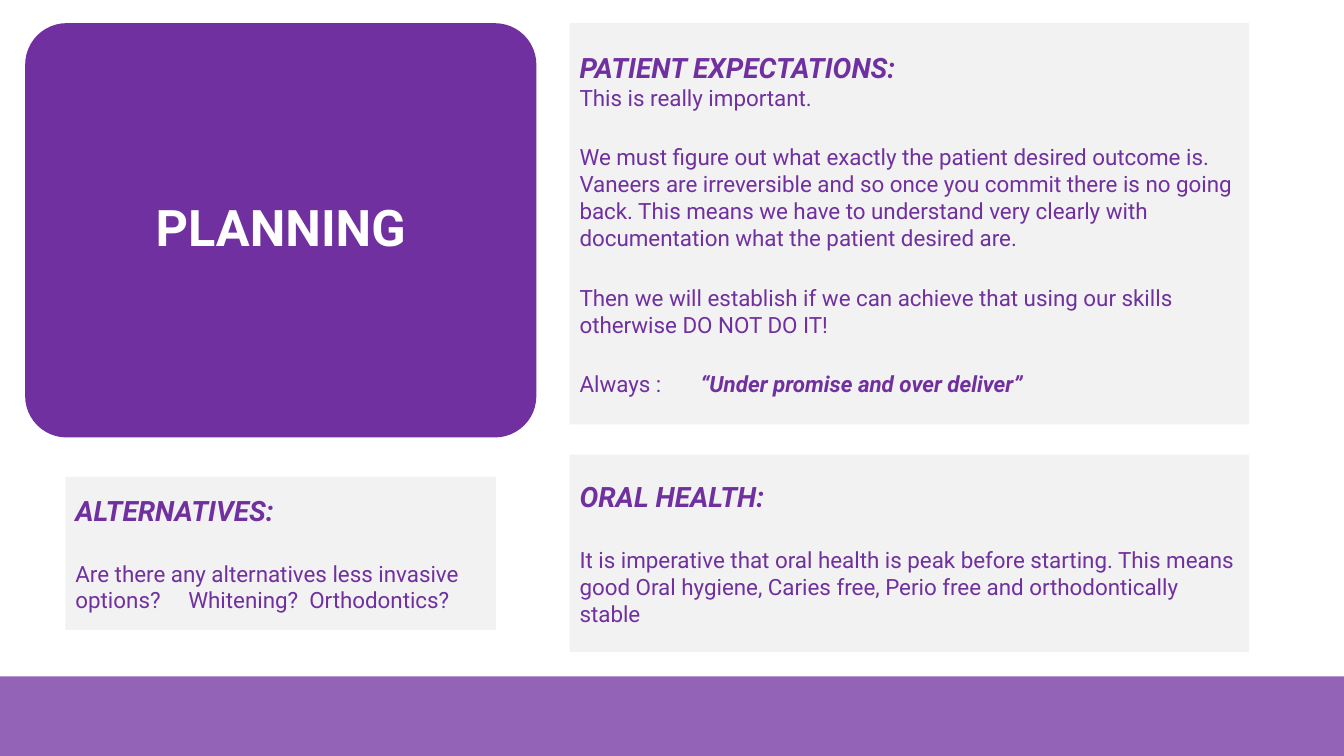
from lxml.etree import SubElement
from pptx import Presentation
from pptx.dml.color import RGBColor
from pptx.enum.shapes import MSO_SHAPE
from pptx.enum.text import MSO_ANCHOR, PP_ALIGN
from pptx.oxml.ns import qn
from pptx.util import Inches, Pt

PURPLE = RGBColor(0x70, 0x30, 0xA0)
PALE_GREY = RGBColor(0xF2, 0xF2, 0xF2)
WHITE = RGBColor(0xFF, 0xFF, 0xFF)

FONT = "Roboto"
HEADING_SIZE = 20
BODY_SIZE = 16
PARAGRAPH_GAP = Pt(23.4)
RIGHT_COLUMN = 5.65
RIGHT_WIDTH = 6.74


def add_block(page, kind, left, top, width, height, color):
    block = page.shapes.add_shape(
        kind, Inches(left), Inches(top), Inches(width), Inches(height))
    block.shadow.inherit = False
    block.fill.solid()
    block.fill.fore_color.rgb = color
    block.line.fill.background()
    frame = block.text_frame
    frame.word_wrap = True
    frame.vertical_anchor = MSO_ANCHOR.MIDDLE
    frame.margin_left = frame.margin_right = Inches(0.1)
    frame.margin_top = frame.margin_bottom = Inches(0.1)
    return block


def set_opacity(shape, percent):
    color = shape.fill._xPr.find(qn("a:solidFill"))[0]
    SubElement(color, qn("a:alpha")).set("val", str(percent * 1000))


def add_span(para, text, size, color=PURPLE, bold=False, italic=False):
    span = para.add_run()
    span.text = text
    span.font.name = FONT
    span.font.size = Pt(size)
    span.font.color.rgb = color
    span.font.bold = bold
    span.font.italic = italic


def add_body(frame, text, gap=PARAGRAPH_GAP):
    para = frame.add_paragraph()
    para.alignment = PP_ALIGN.LEFT
    para.space_before = gap
    add_span(para, text, BODY_SIZE)
    return para


def set_tab_stops(para, *positions):
    tabs = SubElement(para._p.get_or_add_pPr(), qn("a:tabLst"))
    for position in positions:
        tab = SubElement(tabs, qn("a:tab"))
        tab.set("pos", str(Inches(position)))
        tab.set("algn", "l")


def add_panel(page, left, top, width, height, heading):
    """Add a grey panel with its heading and return its text frame."""
    panel = add_block(page, MSO_SHAPE.RECTANGLE,
                      left, top, width, height, PALE_GREY)
    para = panel.text_frame.paragraphs[0]
    para.alignment = PP_ALIGN.LEFT
    add_span(para, heading, HEADING_SIZE, bold=True, italic=True)
    return panel.text_frame


def add_title(page, text):
    card = add_block(page, MSO_SHAPE.ROUNDED_RECTANGLE,
                     0.25, 0.23, 5.07, 4.11, PURPLE)
    card.adjustments[0] = 0.1
    para = card.text_frame.paragraphs[0]
    para.alignment = PP_ALIGN.CENTER
    para.line_spacing = 0.9
    para.space_before = Pt(10)
    add_span(para, text, 36, WHITE, bold=True)


def main():
    deck = Presentation()
    deck.slide_width = Inches(13.33)
    deck.slide_height = Inches(7.5)
    page = deck.slides.add_slide(deck.slide_layouts[6])

    footer = add_block(page, MSO_SHAPE.RECTANGLE, 0, 6.71, 13.33, 0.79, PURPLE)
    set_opacity(footer, 75)
    add_title(page, "PLANNING")

    expectations = add_panel(page, RIGHT_COLUMN, 0.23, RIGHT_WIDTH, 3.98,
                             "PATIENT EXPECTATIONS:")
    add_body(expectations, "This is really important.", gap=Pt(0))
    add_body(expectations,
             "We must figure out what exactly the patient desired outcome is. "
             "Vaneers are irreversible and so once you commit there is no "
             "going back. This means we have to understand very clearly with "
             "documentation what the patient desired are.")
    add_body(expectations,
             "Then we will establish if we can achieve that using our skills "
             "otherwise DO NOT DO IT!")
    motto = add_body(expectations, "Always :\t")
    add_span(motto, "“Under promise and over deliver”", BODY_SIZE,
             bold=True, italic=True)
    set_tab_stops(motto, 1.2)

    oral_health = add_panel(page, RIGHT_COLUMN, 4.51, RIGHT_WIDTH, 1.96,
                            "ORAL HEALTH:")
    add_body(oral_health,
             "It is imperative that oral health is peak before starting. This "
             "means good Oral hygiene, Caries free, Perio free and "
             "orthodontically stable")

    alternatives = add_panel(page, 0.65, 4.73, 4.27, 1.52, "ALTERNATIVES:")
    options = add_body(alternatives,
                       "Are there any alternatives less invasive "
                       "options?\tWhitening?\tOrthodontics?")
    set_tab_stops(options, 1.12, 2.32)

    deck.save("out.pptx")


if __name__ == "__main__":
    main()
